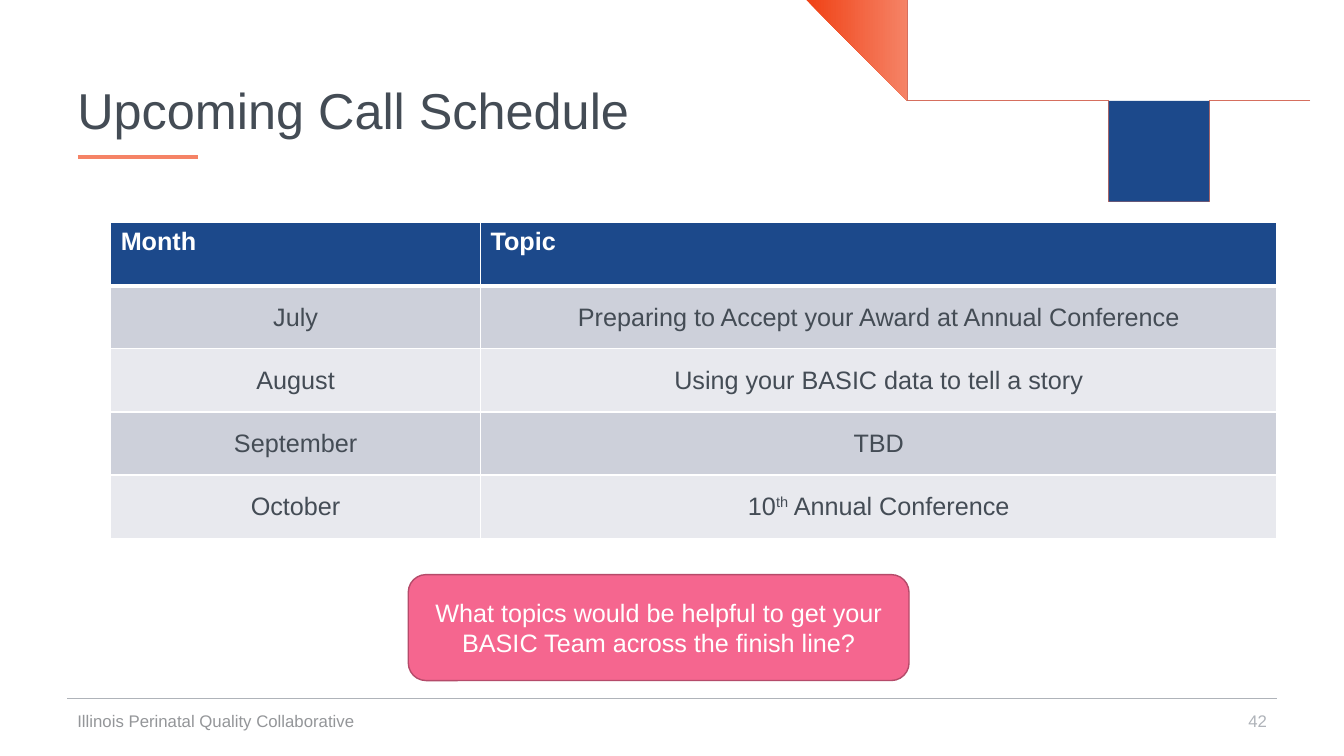
from lxml import etree
from pptx import Presentation
from pptx import util as u
from pptx.dml.color import RGBColor
from pptx.enum import shapes, text
from pptx.oxml import ns

NAVY, CORAL, RED, PINK, ROSE = "1C498B", "F58366", "F04115", "F5668F", "B54B6A"
SLATE, GREY, SILVER, WHITE = "444C55", "949699", "AFB3B9", "FFFFFF"
BANDS = ["CDD0DA", "E8E9EE"]
LEFT, CENTER, RIGHT = text.PP_ALIGN.LEFT, text.PP_ALIGN.CENTER, text.PP_ALIGN.RIGHT

# Knots of the swoosh edges, in units of 2.54 cm, from left to right
CORAL_TOP = [(8.05, 0), (8.82, 0.54), (9.58, 0.99), (10.39, 1.33), (10.81, 1.44), (11.25, 1.5),
             (11.68, 1.52), (12.12, 1.49), (12.56, 1.43), (12.99, 1.32), (13.33, 1.2)]
CORAL_BOTTOM = [(7.86, 0), (8.78, 0.62), (9.55, 1.06), (10.37, 1.39), (10.8, 1.49), (11.24, 1.55),
                (11.69, 1.56), (12.13, 1.52), (12.56, 1.45), (12.94, 1.35), (13.33, 1.21)]
NAVY_TOP = [(8.27, 0), (8.79, 0.38), (9.54, 0.86), (10.34, 1.23), (11.2, 1.43),
            (12.09, 1.45), (12.53, 1.4), (12.97, 1.3), (13.33, 1.19)]
NAVY_BOTTOM = [(8.02, 0), (8.71, 0.49), (9.48, 0.96), (10.31, 1.31), (11.19, 1.5), (11.64, 1.52),
               (12.09, 1.49), (12.53, 1.43), (12.97, 1.32), (13.33, 1.2)]

SCHEDULE = [("Month", "Topic"),
            ("July", "Preparing to Accept your Award at Annual Conference"),
            ("August", "Using your BASIC data to tell a story"),
            ("September", "TBD"),
            ("October", ("10", "th", " Annual Conference"))]


def color(value):
    return RGBColor.from_string(value)


def style(paragraph, size, hue, align=LEFT, bold=False):
    paragraph.alignment = align
    font = paragraph.font
    font.name, font.size, font.bold = "Arial", u.Pt(size), bold
    font.color.rgb = color(hue)


def smooth(knots, steps=6):
    """Sample a Catmull-Rom curve through the knots."""
    padded = [knots[0], *knots, knots[-1]]
    points = []
    for a, b, c, d in zip(padded, padded[1:], padded[2:], padded[3:]):
        for step in range(steps):
            t = step / steps
            points.append(tuple(
                q + t * ((r - p) + t * ((2 * p - 5 * q + 4 * r - s) + t * (3 * q - p - 3 * r + s))) / 2
                for p, q, r, s in zip(a, b, c, d)))
    return points + [knots[-1]]


def add_ribbon(slide, top, bottom):
    outline = smooth(top) + smooth(bottom)[::-1]
    builder = slide.shapes.build_freeform(*outline[0], scale=u.Cm(2.54))
    builder.add_line_segments(outline[1:], close=True)
    ribbon = builder.convert_to_shape()
    ribbon.shadow.inherit = False
    ribbon.line.fill.background()
    return ribbon


def add_rule(slide, left, right, y, hue, width):
    rule = slide.shapes.add_connector(
        shapes.MSO_CONNECTOR.STRAIGHT, u.Cm(left), u.Cm(y), u.Cm(right), u.Cm(y))
    rule.line.color.rgb = color(hue)
    rule.line.width = u.Pt(width)
    etree.SubElement(rule._element.spPr, ns.qn("a:effectLst"))


def fill_text(shape, words, size, hue, align=LEFT):
    frame = shape.text_frame
    frame.word_wrap = True
    frame.vertical_anchor = text.MSO_ANCHOR.MIDDLE
    paragraph = frame.paragraphs[0]
    style(paragraph, size, hue, align)
    paragraph.add_run().text = words
    return paragraph


def add_label(slide, box, words, size, hue, align=LEFT):
    label = slide.shapes.add_textbox(*map(u.Cm, box))
    return fill_text(label, words, size, hue, align)


def add_callout(slide, box, words):
    callout = slide.shapes.add_shape(shapes.MSO_SHAPE.ROUNDED_RECTANGLE, *map(u.Cm, box))
    callout.shadow.inherit = False
    callout.fill.solid()
    callout.fill.fore_color.rgb = color(PINK)
    callout.line.color.rgb = color(ROSE)
    callout.line.width = u.Pt(1)
    fill_text(callout, words, 18, WHITE, CENTER)


def add_borders(cell, top, bottom):
    properties = cell._tc.get_or_add_tcPr()
    for side, width in (("L", 1), ("R", 1), ("T", top), ("B", bottom)):
        line = etree.SubElement(properties, ns.qn("a:ln" + side), w=str(u.Pt(width)))
        fill = etree.SubElement(line, ns.qn("a:solidFill"))
        etree.SubElement(fill, ns.qn("a:srgbClr"), val=WHITE)


def fill_cell(cell, content, row):
    header = row == 0
    add_borders(cell, 3 if row == 1 else 1, 3 if header else 1)
    cell.fill.solid()
    cell.fill.fore_color.rgb = color(NAVY if header else BANDS[(row - 1) % 2])
    cell.vertical_anchor = text.MSO_ANCHOR.TOP if header else text.MSO_ANCHOR.MIDDLE
    paragraph = cell.text_frame.paragraphs[0]
    style(paragraph, 18, WHITE if header else SLATE, LEFT if header else CENTER, header)
    # A tuple holds plain and raised pieces in turn
    pieces = (content,) if isinstance(content, str) else content
    for index, piece in enumerate(pieces):
        run = paragraph.add_run()
        run.text = piece
        if index % 2:
            run._r.get_or_add_rPr().set("baseline", "30000")


def add_schedule(slide, left, top, widths, row_height):
    frame = slide.shapes.add_table(
        len(SCHEDULE), len(widths), u.Cm(left), u.Cm(top),
        u.Cm(sum(widths)), u.Cm(row_height * len(SCHEDULE)))
    table = frame.table
    table.horz_banding = False
    for column, width in zip(table.columns, widths):
        column.width = u.Cm(width)
    for row, contents in enumerate(SCHEDULE):
        table.rows[row].height = u.Cm(row_height)
        for column, content in enumerate(contents):
            fill_cell(table.cell(row, column), content, row)


def main():
    presentation = Presentation()
    presentation.slide_width, presentation.slide_height = u.Cm(33.87), u.Cm(19.05)
    slide = presentation.slides.add_slide(presentation.slide_layouts[6])

    # Swoosh in the top right corner
    coral = add_ribbon(slide, CORAL_TOP, CORAL_BOTTOM)
    coral.fill.gradient()
    coral.fill.gradient_angle = 0
    for stop, position, hue in zip(coral.fill.gradient_stops, (0, 0.2), (RED, CORAL)):
        stop.position = position
        stop.color.rgb = color(hue)
    navy = add_ribbon(slide, NAVY_TOP, NAVY_BOTTOM)
    navy.fill.solid()
    navy.fill.fore_color.rgb = color(NAVY)

    # Footer rule and title underline
    add_rule(slide, 1.7, 32.18, 17.6, SILVER, 0.5)
    add_rule(slide, 1.96, 5, 3.96, CORAL, 2.5)

    # Title and footer
    title = add_label(slide, (1.7, 1.02, 30.48, 3.68), "Upcoming Call Schedule", 36, SLATE)
    title.line_spacing = 0.9
    add_label(slide, (24.56, 17.65, 7.62, 1.02), "42", 12, SILVER, RIGHT)
    add_label(slide, (1.7, 17.65, 11.43, 1.02), "Illinois Perinatal Quality Collaborative", 12, GREY)

    # Question and schedule
    add_callout(slide, (10.29, 14.48, 12.62, 2.67),
                "What topics would be helpful to get your BASIC Team across the finish line?")
    add_schedule(slide, 2.79, 5.61, (9.32, 20.07), 1.59)

    presentation.save("out.pptx")


if __name__ == "__main__":
    main()
